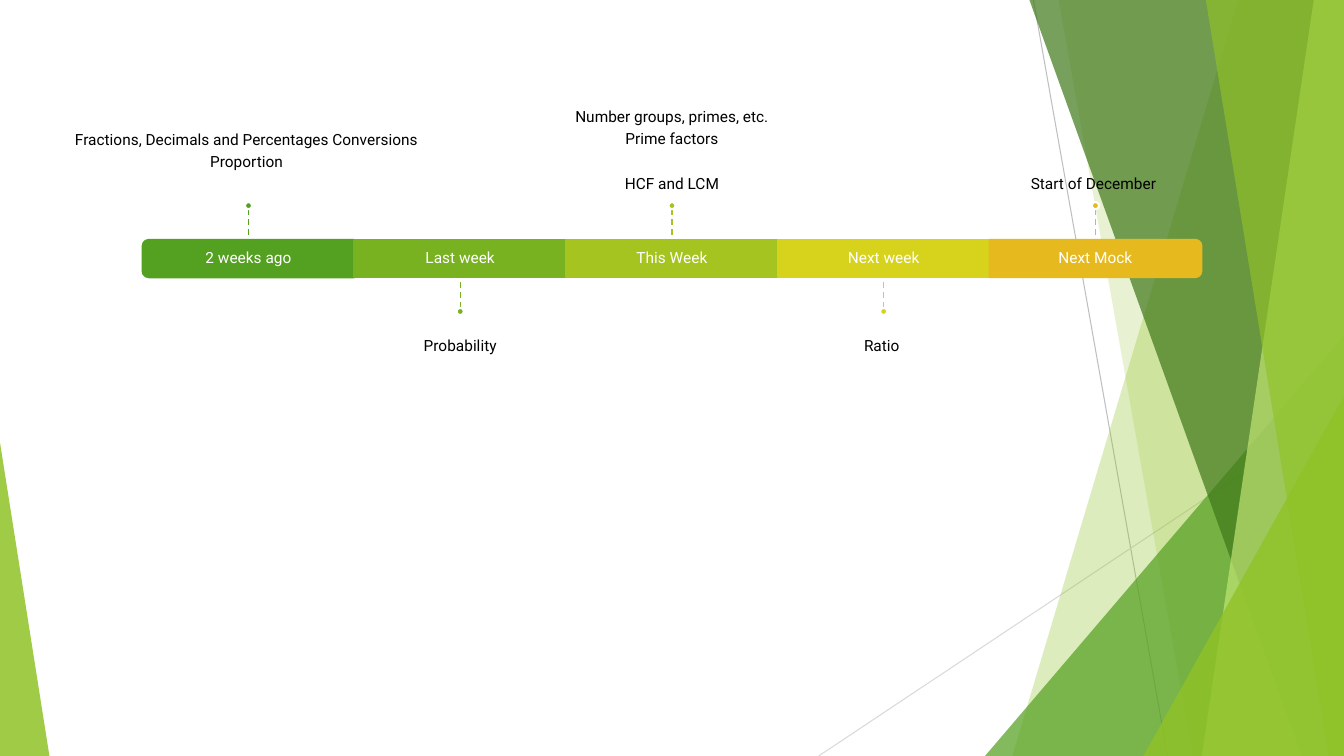
"""Build a slide with a five-step lesson timeline over a green faceted backdrop."""
from pptx import Presentation
from pptx.dml.color import RGBColor
from pptx.enum.dml import MSO_LINE
from pptx.enum.shapes import MSO_CONNECTOR, MSO_SHAPE
from pptx.enum.text import MSO_ANCHOR, PP_ALIGN
from pptx.oxml import parse_xml
from pptx.oxml.ns import nsdecls, qn
from pptx.util import Inches, Pt

LINE, DASH = MSO_CONNECTOR.STRAIGHT, MSO_LINE.DASH
RECT, ROUND = MSO_SHAPE.RECTANGLE, MSO_SHAPE.ROUND_2_SAME_RECTANGLE
WEDGE, DOT = MSO_SHAPE.RIGHT_TRIANGLE, MSO_SHAPE.OVAL
PEAK = MSO_SHAPE.ISOSCELES_TRIANGLE
TOP, MID, LOW = MSO_ANCHOR.TOP, MSO_ANCHOR.MIDDLE, MSO_ANCHOR.BOTTOM
CENTER = PP_ALIGN.CENTER

HEX = {
    "lime": "90C226", "leaf": "54A021", "pine": "3F7819", "pale": "C0E474",
    "grass": "79B220", "moss": "A5C41F", "lemon": "D7D31D", "gold": "E6B91E",
    "gray": "BFBFBF", "mist": "D9D9D9", "white": "FFFFFF", "black": "000000",
}
RGB = {name: RGBColor.from_string(code) for name, code in HEX.items()}
W, H = 13.33, 7.5
STEP, BAR, AXIS = 2.1, 0.37, 2.565
NOTE_W, NOTE_H, GAP = 3.51, 1.3, 0.09
PITCH = 15.7
PARA = {"alignment": CENTER, "line_spacing": 0.9, "space_after": Pt(4)}

deck = Presentation()
deck.slide_width, deck.slide_height = Inches(W), Inches(H)
slide = deck.slides.add_slide(deck.slide_layouts[6])
shapes = slide.shapes


def draw_line(x1, y1, x2, y2, color, width, dash=None):
    line = shapes.add_connector(LINE, *map(Inches, (x1, y1, x2, y2)))
    line.line.color.rgb = RGB[color]
    line.line.width = Pt(width)
    line.line.dash_style = dash
    line._element.spPr.append(parse_xml(f"<a:effectLst {nsdecls('a')}/>"))


def add_text(x, y, w, h, rows, color, anchor, top=0, low=0):
    frame = shapes.add_textbox(*map(Inches, (x, y, w, h))).text_frame
    look = {"word_wrap": True, "vertical_anchor": anchor, "margin_left": 0,
            "margin_right": 0, "margin_top": Inches(top), "margin_bottom": Inches(low)}
    for key, value in look.items():
        setattr(frame, key, value)
    frame.text = "\n".join(rows)
    for para in frame.paragraphs:
        for key, value in PARA.items():
            setattr(para, key, value)
        font = para.runs[0].font
        font.name, font.size, font.color.rgb = "Roboto", Pt(11), RGB[color]
    return frame


draw_line(10.25, 0, 11.58, H, "gray", 0.75)
draw_line(W, 4.03, 8.12, H, "mist", 0.75)

facets = [
    ("band", 12.28, 10.04, "lime", 30),
    ("band", 10.5, 11.83, "lime", 20),
    ("peak", 9.77, 3.33, "leaf", 72),
    ("band", 10.21, 12.91, "pine", 70),
    ("band", 13.03, 11.92, "pale", 70),
    ("band", 11.96, 13.18, "lime", 65),
    ("peak", 11.34, 3.93, "lime", 80),
    ("edge", 0.49, 4.39, "lime", 85),
]
for kind, first, second, color, alpha in facets:
    if kind == "band":
        pen = shapes.build_freeform(Inches(first), 0)
        pen.add_line_segments([(Inches(x), Inches(y)) for x, y in
                               [(W, 0), (W, H), (second, H)]])
        facet = pen.convert_to_shape()
    elif kind == "peak":
        facet = shapes.add_shape(PEAK, *map(Inches, (first, second, W - first, H - second)))
        facet.adjustments[0] = 1
    else:
        facet = shapes.add_shape(WEDGE, *map(Inches, (0, second, first, H - second)))
    facet.shadow.inherit = False
    facet.fill.solid()
    facet.fill.fore_color.rgb = RGB[color]
    facet.line.fill.background()
    tint = facet._element.spPr.find(qn("a:solidFill"))[0]
    tint.append(parse_xml(f'<a:alpha {nsdecls("a")} val="{alpha * 1000}"/>'))

steps = [
    ("2 weeks ago", "leaf", ["Fractions, Decimals and Percentages Conversions ", "Proportion "]),
    ("Last week", "grass", ["Probability"]),
    ("This Week", "moss", ["Number groups, primes, etc.", "Prime factors", "HCF and LCM"]),
    ("Next week", "lemon", ["Ratio "]),
    ("Next Mock", "gold", ["Start of December "]),
]
turns = {0: 270, len(steps) - 1: 90}
for i, (label, color, rows) in enumerate(steps):
    mid = W / 2 + (i - 2) * STEP
    side = -1 if i % 2 == 0 else 1
    wide, tall = (BAR, STEP) if i in turns else (STEP, BAR)
    bar = shapes.add_shape(ROUND if i in turns else RECT,
                           *map(Inches, (mid - wide / 2, AXIS - tall / 2, wide, tall)))
    bar.rotation = turns.get(i, 0)
    add_text(mid - STEP / 2, AXIS - BAR / 2, STEP, BAR, [label], "white", MID, GAP, GAP)

    left = mid - NOTE_W / 2
    if side < 0:
        low = GAP + PITCH / 72 if i == 0 else GAP
        note = add_text(left, 0.7, NOTE_W, NOTE_H, rows, "black", LOW, low=low)
        if len(rows) > 2:
            note.paragraphs[-1].space_before = Pt(PITCH)
    else:
        add_text(left, 3.12, NOTE_W, NOTE_H, rows, "black", TOP, top=GAP + PITCH / 72)

    edge = AXIS + side * BAR / 2
    draw_line(mid, edge + side * 0.3, mid, edge, color, 1, DASH)
    dot = shapes.add_shape(DOT, *map(Inches, (mid - 0.035, AXIS + side * 0.525 - 0.035, 0.07, 0.07)))
    for shape, rim in [(bar, color), (dot, "white")]:
        shape.shadow.inherit = False
        shape.fill.solid()
        shape.fill.fore_color.rgb = RGB[color]
        shape.line.color.rgb = RGB[rim]
        shape.line.width = Pt(1.5)

deck.save("out.pptx")
